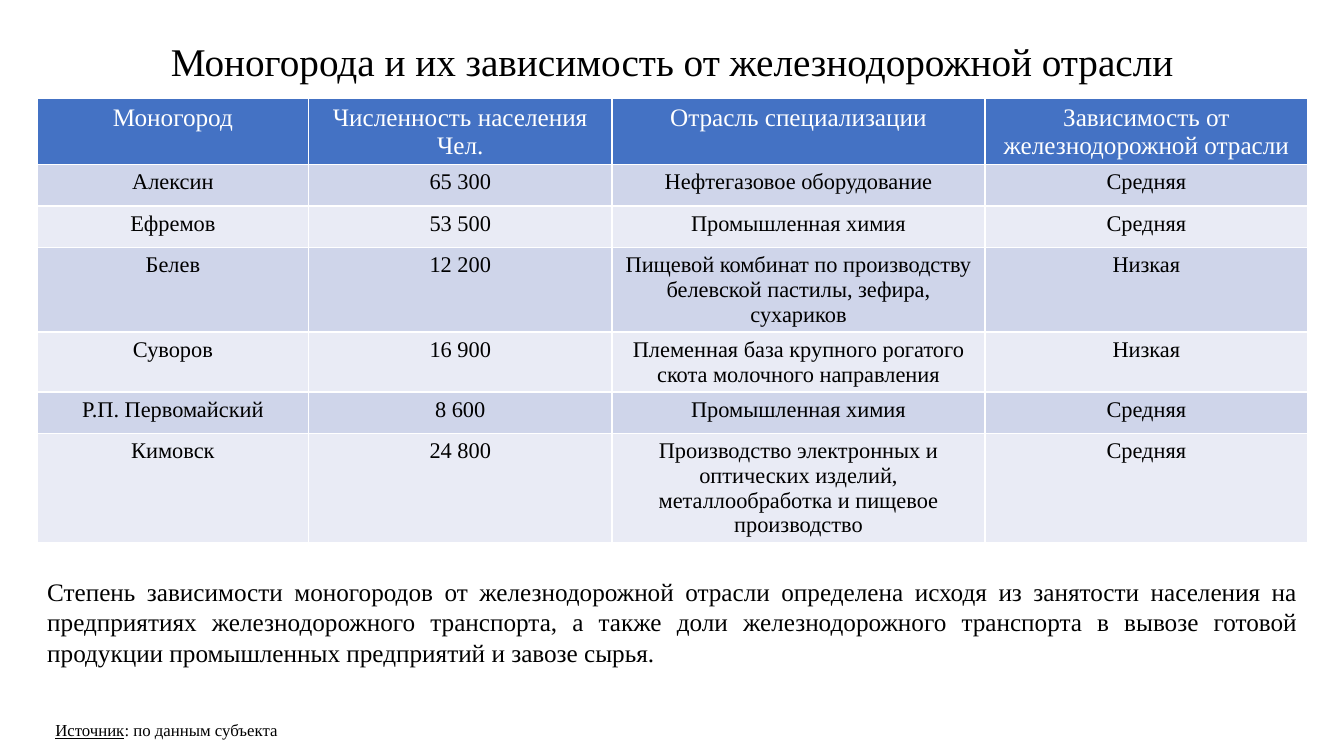
from pptx import Presentation
from pptx.dml.color import RGBColor
from pptx.enum.text import MSO_ANCHOR, MSO_AUTO_SIZE, PP_ALIGN
from pptx.util import Inches, Pt

CENTER, JUSTIFY, LEFT = PP_ALIGN.CENTER, PP_ALIGN.JUSTIFY, PP_ALIGN.LEFT
MIDDLE = MSO_ANCHOR.MIDDLE
NO_FIT, GROW = MSO_AUTO_SIZE.NONE, MSO_AUTO_SIZE.SHAPE_TO_FIT_TEXT

BLACK = RGBColor(0x00, 0x00, 0x00)
WHITE = RGBColor(0xFF, 0xFF, 0xFF)
HEADER = RGBColor(0x44, 0x72, 0xC4)
BANDS = (RGBColor(0xE9, 0xEB, 0xF5), RGBColor(0xCF, 0xD5, 0xEA))
FONT = "Times New Roman"

TITLE = "Моногорода и их зависимость от железнодорожной отрасли"
COLUMNS = (2.69, 3.01, 3.7, 3.2)
ROW_HEIGHT = 0.41
ROWS = (
    ("Моногород", "Численность населения\nЧел.", "Отрасль специализации",
     "Зависимость от железнодорожной отрасли"),
    ("Алексин", "65 300", "Нефтегазовое оборудование", "Средняя"),
    ("Ефремов", "53 500", "Промышленная химия", "Средняя"),
    ("Белев", "12 200",
     "Пищевой комбинат по производству белевской пастилы, зефира, сухариков",
     "Низкая"),
    ("Суворов", "16 900",
     "Племенная база крупного рогатого скота молочного направления", "Низкая"),
    ("Р.П. Первомайский", "8 600", "Промышленная химия", "Средняя"),
    ("Кимовск", "24 800",
     "Производство электронных и оптических изделий, металлообработка "
     "и пищевое производство", "Средняя"),
)
CONCLUSION = (
    "Степень зависимости моногородов от железнодорожной отрасли определена "
    "исходя из занятости населения на предприятиях железнодорожного "
    "транспорта, а также доли железнодорожного транспорта в вывозе готовой "
    "продукции промышленных предприятий и завозе сырья."
)


def add_run(p, text, size, color=BLACK, underline=False):
    r = p.add_run()
    r.text = text
    r.font.color.rgb = color
    formats = {"name": FONT, "size": Pt(size), "bold": False,
               "underline": underline}
    for name, value in formats.items():
        setattr(r.font, name, value)


def fill_title(sp, left, top, width, height):
    box = {"left": left, "top": top, "width": width, "height": height}
    for name, value in box.items():
        setattr(sp, name, Inches(value))
    tf = sp.text_frame
    tf.auto_size = NO_FIT
    tf.vertical_anchor = MIDDLE
    p = tf.paragraphs[0]
    p.alignment = CENTER
    p.line_spacing = 0.9
    add_run(p, TITLE, 28)


def fill_cell(cell, text, size, color, fill):
    cell.fill.solid()
    cell.fill.fore_color.rgb = fill
    tf = cell.text_frame
    for i, line in enumerate(text.split("\n")):
        p = tf.add_paragraph() if i else tf.paragraphs[0]
        p.alignment = CENTER
        add_run(p, line, size, color)


def add_towns_table(s, left, top):
    table = s.shapes.add_table(
        len(ROWS), len(COLUMNS), Inches(left), Inches(top),
        Inches(sum(COLUMNS)), Inches(ROW_HEIGHT * len(ROWS))).table
    for column, width in zip(table.columns, COLUMNS):
        column.width = Inches(width)
    for i, row in enumerate(ROWS):
        table.rows[i].height = Inches(ROW_HEIGHT)
        style = (16, BLACK, BANDS[i % 2]) if i else (18, WHITE, HEADER)
        for j, text in enumerate(row):
            fill_cell(table.cell(i, j), text, *style)


def add_text(s, left, top, width, height, size, alignment, runs):
    sp = s.shapes.add_textbox(
        Inches(left), Inches(top), Inches(width), Inches(height))
    tf = sp.text_frame
    tf.word_wrap = True
    tf.auto_size = GROW
    p = tf.paragraphs[0]
    p.alignment = alignment
    for text, underline in runs:
        add_run(p, text, size, underline=underline)


def main():
    prs = Presentation()
    prs.slide_width, prs.slide_height = Inches(13.33), Inches(7.5)
    s = prs.slides.add_slide(prs.slide_layouts[5])
    fill_title(s.shapes.title, 0.8, 0.36, 11.73, 0.54)
    add_towns_table(s, 0.37, 0.98)
    add_text(s, 0.45, 7.09, 6.67, 0.3, 12, LEFT,
             (("Источник", True), (": по данным субъекта", False)))
    add_text(s, 0.37, 5.67, 12.6, 1.01, 18, JUSTIFY, ((CONCLUSION, False),))
    prs.save("out.pptx")


if __name__ == "__main__":
    main()
